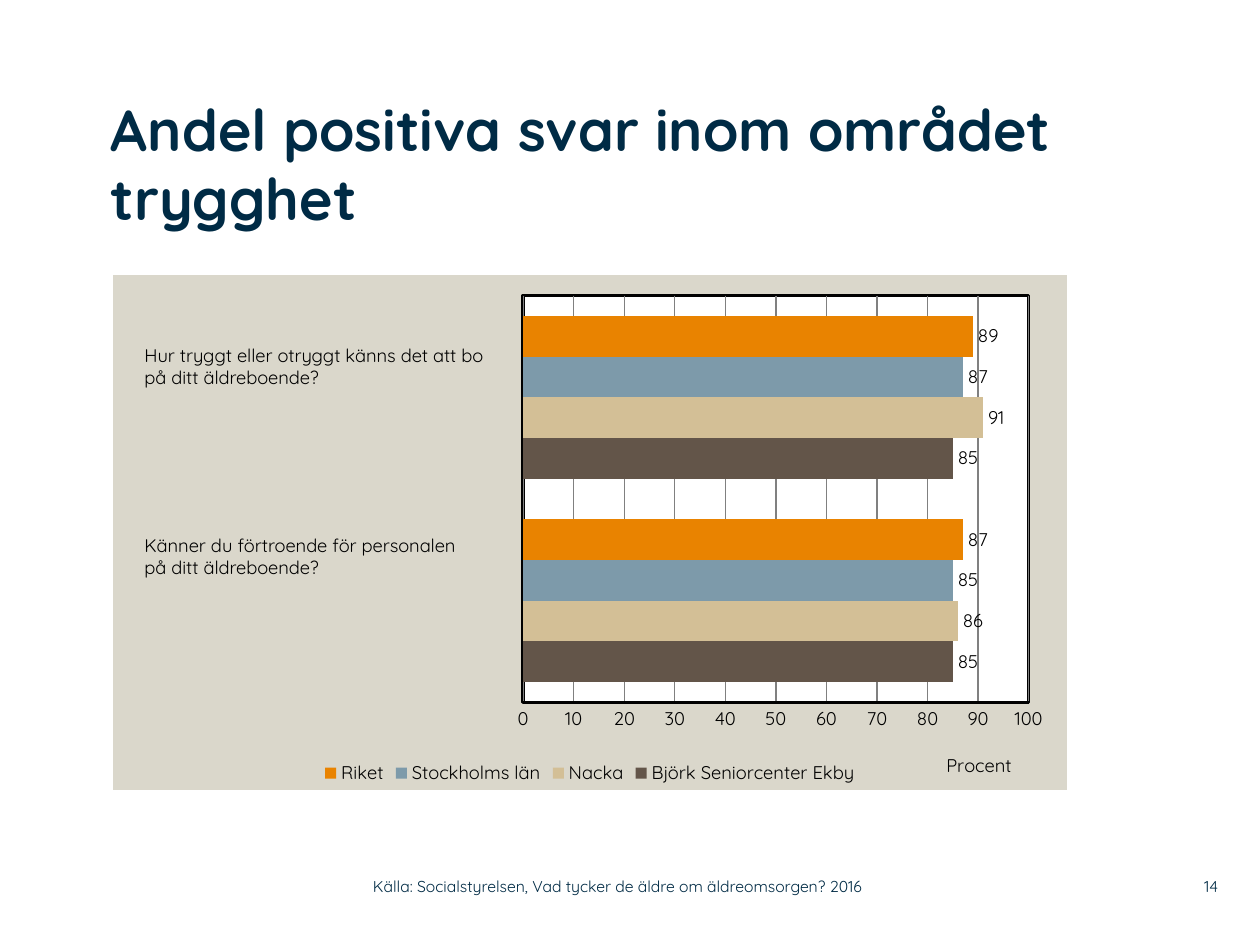
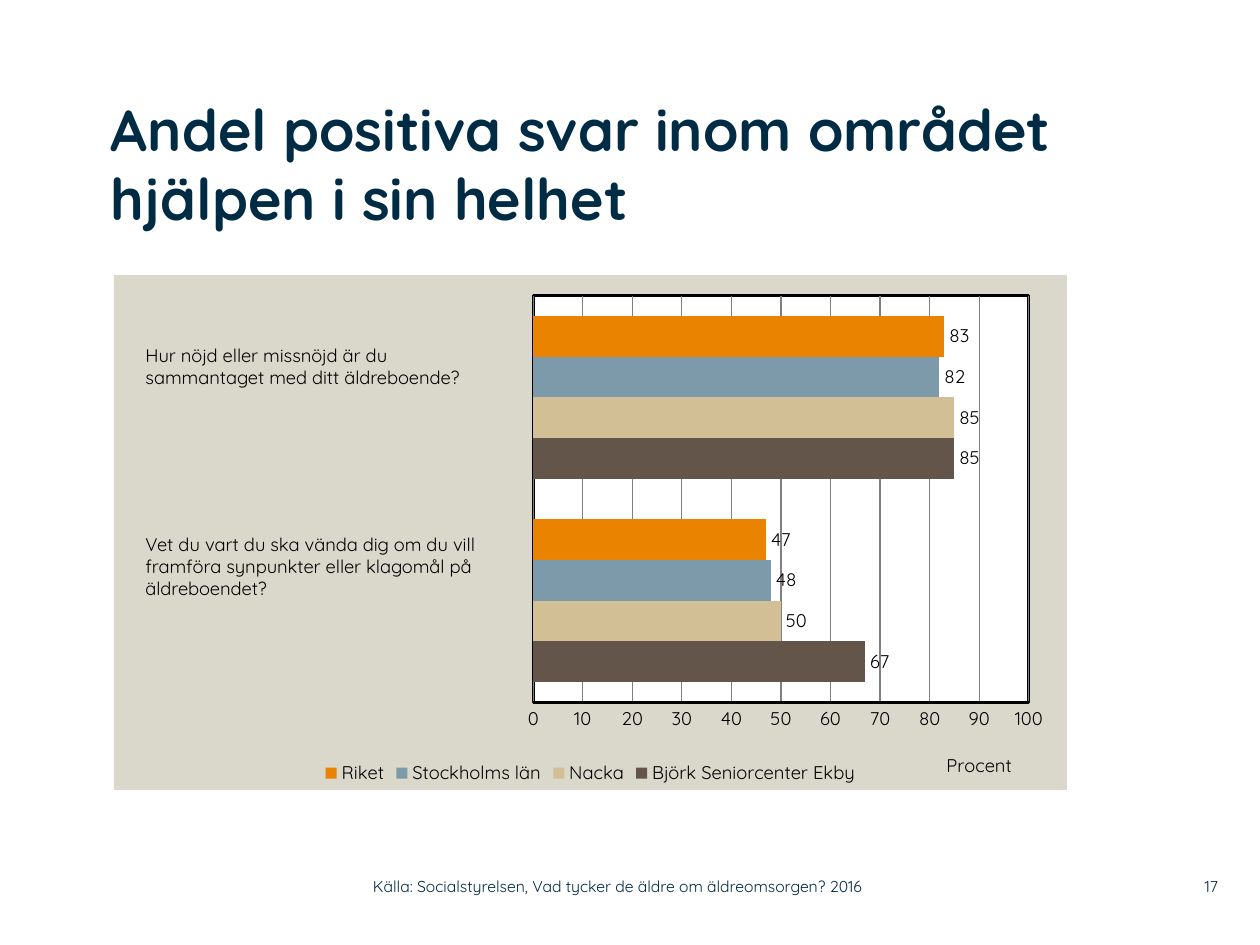
from pptx import Presentation
from pptx.chart.data import CategoryChartData
from pptx.dml.color import RGBColor
from pptx.enum.chart import XL_CHART_TYPE, XL_LABEL_POSITION, XL_LEGEND_POSITION, XL_TICK_MARK
from pptx.enum.text import MSO_ANCHOR, PP_ALIGN
from pptx.oxml import parse_xml
from pptx.oxml.ns import nsdecls
from pptx.util import Pt

PX = 914400 // 126
FONT = "Quicksand"
NAVY, BLACK, WHITE, PANEL, GRID = "002B45", "000000", "FFFFFF", "DAD7CB", "808080"
SOURCE = "Källa: Socialstyrelsen, Vad tycker de äldre om äldreomsorgen? 2016"

# Bars stack upwards, so the first series lies at the bottom
SERIES_COLORS = {
    "Björk Seniorcenter Ekby": "635549",
    "Nacka": "D3BF96",
    "Stockholms län": "7D9AAA",
    "Riket": "E98300",
}

# Values per series: lower question, upper question
SURVEY_AREAS = [
    {
        "title": "Andel positiva svar inom området trygghet",
        "page": "14",
        "values": [(85, 85), (86, 91), (85, 87), (87, 89)],
        "chart_box": (113, 275, 954, 515),
        "plot_span": (0.43, 0.53),
        "questions": [
            ("Hur tryggt eller otryggt känns det att bo på ditt äldreboende?", (132, 338, 370, 57)),
            ("Känner du förtroende för personalen\npå ditt äldreboende?", (132, 528, 370, 57)),
        ],
    },
    {
        "title": "Andel positiva svar inom området hjälpen i sin helhet",
        "page": "17",
        "values": [(67, 85), (50, 85), (48, 82), (47, 83)],
        "chart_box": (114, 275, 953, 515),
        "plot_span": (0.44, 0.52),
        "questions": [
            ("Hur nöjd eller missnöjd är du\nsammantaget med ditt äldreboende?", (133, 338, 375, 57)),
            ("Vet du vart du ska vända dig om du vill framföra synpunkter eller "
             "klagomål på äldreboendet?", (133, 527, 375, 79)),
        ],
    },
]

LAYOUT = (
    "<c:layout %s><c:manualLayout>{target}"
    '<c:xMode val="edge"/><c:yMode val="edge"/><c:x val="{x}"/><c:y val="{y}"/>{size}'
    "</c:manualLayout></c:layout>" % nsdecls("c")
)
AREA = (
    "<c:spPr %s><a:solidFill><a:srgbClr val=\"{fill}\"/></a:solidFill>{line}</c:spPr>"
    % nsdecls("c", "a")
)
NO_LINE = "<a:ln><a:noFill/></a:ln>"
FRAME_LINE = f'<a:ln w="25400"><a:solidFill><a:srgbClr val="{BLACK}"/></a:solidFill></a:ln>'


def rgb(hex_color):
    return RGBColor.from_string(hex_color)


def add_text(slide, text, box, size, color, bold=False, inset=True,
             anchor=MSO_ANCHOR.TOP, align=PP_ALIGN.LEFT):
    """Add a wrapping text box; each line of text becomes a paragraph."""
    frame = slide.shapes.add_textbox(*[length * PX for length in box]).text_frame
    frame.word_wrap = True
    frame.vertical_anchor = anchor
    if not inset:
        frame.margin_left = frame.margin_right = frame.margin_top = frame.margin_bottom = 0
    frame.text = text
    for paragraph in frame.paragraphs:
        paragraph.alignment = align
        paragraph.font.name = FONT
        paragraph.font.size = Pt(size)
        paragraph.font.bold = bold
        paragraph.font.color.rgb = rgb(color)


prs = Presentation()
prs.slide_width = 1260 * PX
prs.slide_height = 945 * PX

for area in SURVEY_AREAS:
    slide = prs.slides.add_slide(prs.slide_layouts[6])

    answers = CategoryChartData()
    answers.categories = ["1", "2"]
    for name, values in zip(SERIES_COLORS, area["values"]):
        answers.add_series(name, values)
    chart = slide.shapes.add_chart(
        XL_CHART_TYPE.BAR_CLUSTERED, *[length * PX for length in area["chart_box"]], answers
    ).chart
    chart.has_title = False
    chart.font.name = FONT
    chart.font.size = Pt(10.5)
    chart.font.color.rgb = rgb(BLACK)
    chart.has_legend = True
    chart.legend.position = XL_LEGEND_POSITION.BOTTOM
    chart.legend.include_in_layout = False

    bars = chart.plots[0]
    bars.gap_width = 100
    bars.overlap = 0
    bars.vary_by_categories = False
    bars.has_data_labels = True
    bars.data_labels.show_value = True
    bars.data_labels.position = XL_LABEL_POSITION.OUTSIDE_END
    for series in bars.series:
        series.format.fill.solid()
        series.format.fill.fore_color.rgb = rgb(SERIES_COLORS[series.name])

    chart.category_axis.visible = False
    percent = chart.value_axis
    percent.minimum_scale, percent.maximum_scale, percent.major_unit = 0, 100, 10
    percent.major_tick_mark = percent.minor_tick_mark = XL_TICK_MARK.NONE
    percent.format.line.color.rgb = rgb(BLACK)
    percent.format.line.width = Pt(2)
    percent.major_gridlines.format.line.color.rgb = rgb(GRID)
    percent.major_gridlines.format.line.width = Pt(0.75)
    percent.axis_title.text_frame.text = "Procent"
    unit_font = percent.axis_title.text_frame.paragraphs[0].font
    unit_font.name = FONT
    unit_font.size = Pt(10.5)
    unit_font.bold = False
    unit_font.color.rgb = rgb(BLACK)

    # Fixed places for the axis title and the plot, and their backgrounds
    unit_title = percent.axis_title._element
    plot_area = chart._chartSpace.chart.plotArea
    for parent in (unit_title, plot_area):
        for automatic in parent.findall("{*}layout"):
            parent.remove(automatic)
    unit_title.find("{*}tx").addnext(
        parse_xml(LAYOUT.format(target="", x=0.87, y=0.92, size="")))
    plot_left, plot_width = area["plot_span"]
    plot_area.insert(0, parse_xml(LAYOUT.format(
        target='<c:layoutTarget val="inner"/>', x=plot_left, y=0.04,
        size=f'<c:w val="{plot_width}"/><c:h val="0.79"/>')))
    plot_area.append(parse_xml(AREA.format(fill=WHITE, line=FRAME_LINE)))
    chart._chartSpace.chart.addnext(parse_xml(AREA.format(fill=PANEL, line=NO_LINE)))

    add_text(slide, area["title"], (111, 94, 958, 179), 33, NAVY, bold=True, inset=False)
    for question, box in area["questions"]:
        add_text(slide, question, box, 10.5, BLACK)
    add_text(slide, area["page"], (1159, 868, 59, 37), 9, NAVY, inset=False,
             anchor=MSO_ANCHOR.MIDDLE, align=PP_ALIGN.RIGHT)
    add_text(slide, SOURCE, (373, 868, 558, 37), 9, NAVY, inset=False,
             anchor=MSO_ANCHOR.MIDDLE)

prs.save("out.pptx")
